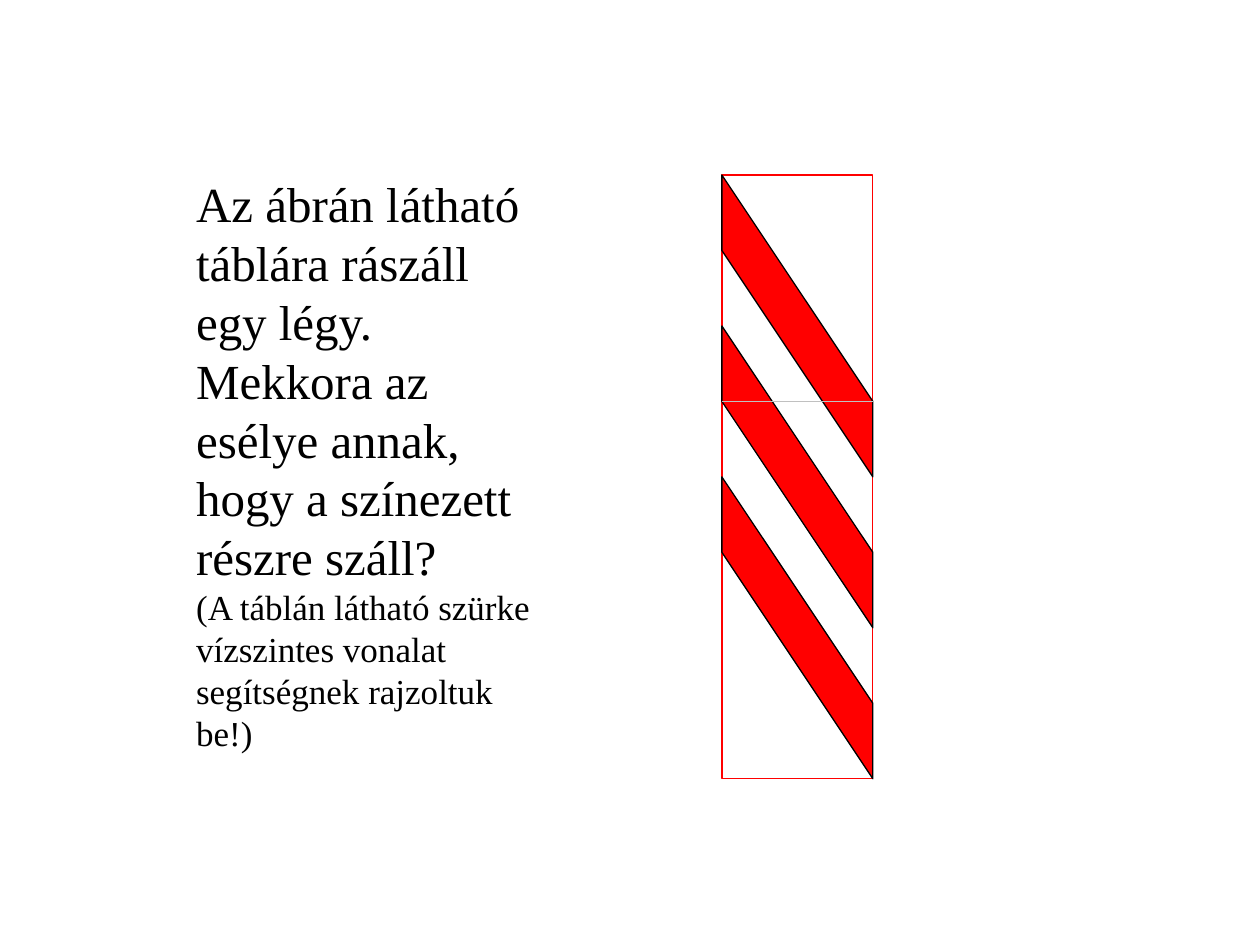
from dataclasses import dataclass

from lxml.etree import SubElement
from pptx import Presentation
from pptx.dml.color import RGBColor
from pptx.enum.shapes import MSO_CONNECTOR, MSO_SHAPE
from pptx.enum.text import MSO_ANCHOR
from pptx.oxml.ns import qn
from pptx.util import Pt


@dataclass(frozen=True)
class Theme:
    font: str = "Times New Roman"
    question_size: float = 28
    hint_size: float = 20
    outline: float = 0.75
    ink: RGBColor = RGBColor(0, 0, 0)
    board: RGBColor = RGBColor(255, 255, 255)
    stripe: RGBColor = RGBColor(255, 0, 0)
    guide: RGBColor = RGBColor(192, 192, 192)


THEME = Theme()
QUESTION = ("Az ábrán látható táblára rászáll egy légy. Mekkora az esélye annak, "
            "hogy a színezett részre száll?")
HINT = "(A táblán látható szürke vízszintes vonalat segítségnek rajzoltuk be!)"


def paint(part, fill, line):
    part.shadow.inherit = False
    part.fill.solid()
    part.fill.fore_color.rgb = fill
    part.line.color.rgb = line
    part.line.width = Pt(THEME.outline)


def add_problem(slide, left, top, width, height):
    problem = slide.shapes.add_textbox(Pt(left), Pt(top), Pt(width), Pt(height)).text_frame
    problem.word_wrap = True
    problem.vertical_anchor = MSO_ANCHOR.MIDDLE
    problem.text = f"{QUESTION}\n{HINT}"
    for paragraph, size in zip(problem.paragraphs, (THEME.question_size, THEME.hint_size)):
        paragraph.font.name = THEME.font
        paragraph.font.size = Pt(size)
        paragraph.font.color.rgb = THEME.ink


def add_board(slide, left, top, width, height):
    parts = slide.shapes.add_group_shape().shapes
    right = left + width
    unit = height / 8

    board = parts.add_shape(MSO_SHAPE.RECTANGLE, Pt(left), Pt(top), Pt(width), Pt(height))
    paint(board, THEME.board, THEME.stripe)

    for step in (0, 4, 2):
        start = top + step * unit
        corners = [(right, start + 3 * unit), (right, start + 4 * unit), (left, start + unit)]
        outline = parts.build_freeform(Pt(left), Pt(start))
        outline.add_line_segments([(Pt(x), Pt(y)) for x, y in corners], close=True)
        paint(outline.convert_to_shape(), THEME.stripe, THEME.ink)

    level = Pt(top + 3 * unit)
    guide = parts.add_connector(MSO_CONNECTOR.STRAIGHT, Pt(left), level, Pt(right), level)
    guide.line.color.rgb = THEME.guide
    guide.line.width = Pt(THEME.outline)
    SubElement(guide._element.spPr, qn("a:effectLst"))


def main():
    presentation = Presentation()
    presentation.slide_width = Pt(720)
    presentation.slide_height = Pt(540)
    slide = presentation.slides.add_slide(presentation.slide_layouts[6])
    add_problem(slide, left=105, top=94.5, width=215.5, height=341)
    add_board(slide, left=412.5, top=100, width=86.25, height=345)
    presentation.save("out.pptx")


if __name__ == "__main__":
    main()
